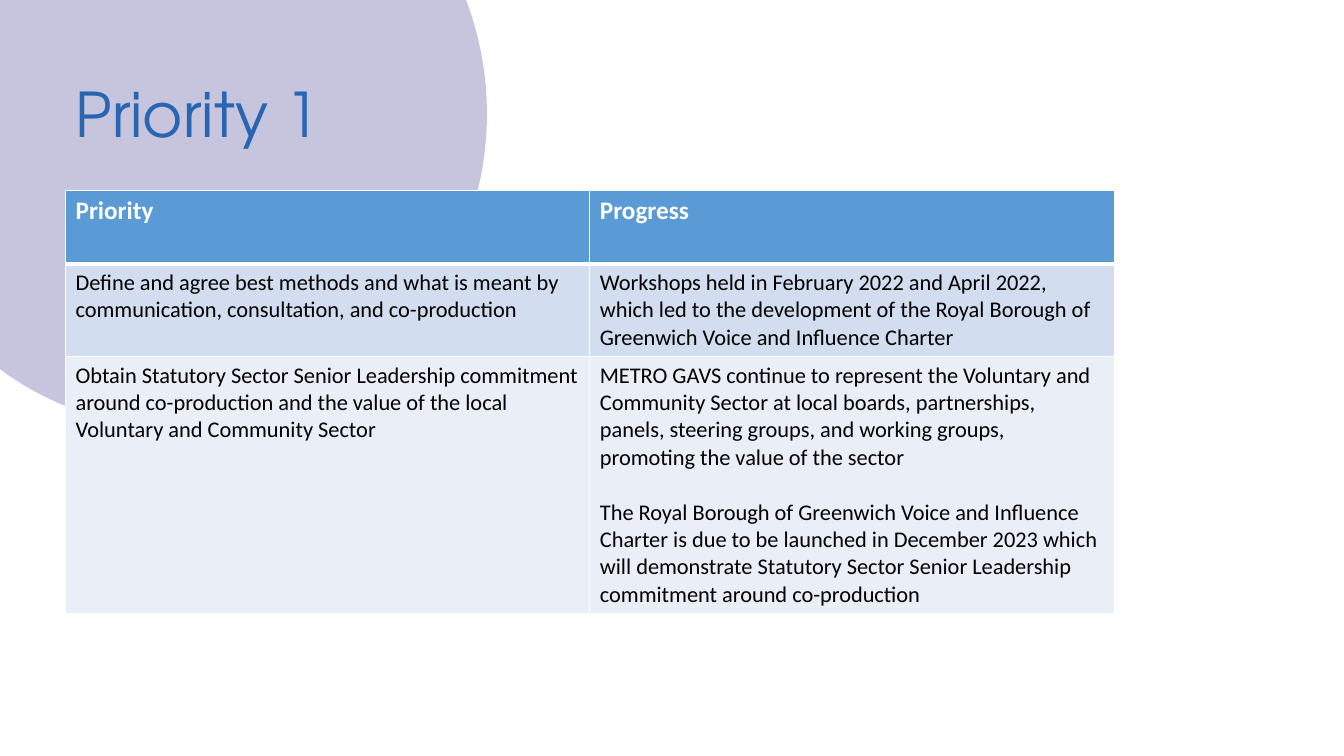
from pptx import Presentation
from pptx.dml.color import RGBColor
from pptx.enum.shapes import MSO_SHAPE
from pptx.enum.text import MSO_ANCHOR, PP_ALIGN
from pptx.oxml import parse_xml
from pptx.oxml.ns import nsdecls, qn
from pptx.util import Pt
from lxml import etree

ELLIPSE = MSO_SHAPE.OVAL
MIDDLE = MSO_ANCHOR.MIDDLE
LEFT = PP_ALIGN.LEFT
PX = 9144
TITLE_ONLY = 5
WHITE = "FFFFFF"

TITLE_FORMAT = {"name": "TeX Gyre Adventor", "size": Pt(44), "bold": False}
HEADER_FORMAT = {"name": "Calibri", "size": Pt(18), "bold": True}
BODY_FORMAT = {"name": "Calibri", "size": Pt(16), "bold": False}
COLUMN_WIDTHS = [520, 520]
ROW_HEIGHTS = [73, 92, 253]
ROW_FILLS = ["5B9BD5", "D2DEEF", "EAEFF7"]
ROWS = [
    [["Priority"], ["Progress"]],
    [
        ["Define and agree best methods and what is meant by communication, "
         "consultation, and co-production"],
        ["Workshops held in February 2022 and April 2022, which led to the "
         "development of the Royal Borough of Greenwich Voice and Influence Charter"],
    ],
    [
        ["Obtain Statutory Sector Senior Leadership commitment around co-production "
         "and the value of the local Voluntary and Community Sector"],
        ["METRO GAVS continue to represent the Voluntary and Community Sector at local "
         "boards, partnerships, panels, steering groups, and working groups, "
         "promoting the value of the sector",
         "The Royal Borough of Greenwich Voice and Influence Charter is due to be "
         "launched in December 2023 which will demonstrate Statutory Sector Senior "
         "Leadership commitment around co-production"],
    ],
]


def px(*lengths):
    """Turn px lengths into EMU."""
    return [length * PX for length in lengths]


def colour(value):
    """Turn a hex string into a colour."""
    return RGBColor.from_string(value)


def add_span(para, text, formats, ink):
    """Add formatted text to a paragraph."""
    span = para.add_run()
    span.text = text
    for name, value in formats.items():
        setattr(span.font, name, value)
    span.font.color.rgb = colour(ink)


def add_title(page, text):
    """Place and format the title placeholder."""
    title = page.shapes.title
    title.left, title.top, title.width, title.height = px(65, 44, 1040, 145)
    title.text_frame.vertical_anchor = MIDDLE
    para = title.text_frame.paragraphs[0]
    para.alignment = LEFT
    para.line_spacing = 0.9
    add_span(para, text, TITLE_FORMAT, "2865B2")


def add_circle(page):
    """Set the translucent circle behind the title."""
    circle = page.shapes.add_shape(ELLIPSE, *px(-127, -199, 610, 624))
    circle.shadow.inherit = False
    circle.line.fill.background()
    circle.fill.solid()
    circle.fill.fore_color.rgb = colour("483C95")
    shade = circle.element.spPr.find(qn("a:solidFill"))[0]
    etree.SubElement(shade, qn("a:alpha"), val="30000")
    page.shapes.title.element.addprevious(circle.element)


def add_borders(cell, widths):
    """Draw white cell borders with point widths by side."""
    properties = cell._tc.get_or_add_tcPr()
    for position, (side, width) in enumerate(widths.items()):
        border = parse_xml(
            f'<a:ln{side} {nsdecls("a")} w="{Pt(width)}"><a:solidFill>'
            f'<a:srgbClr val="{WHITE}"/></a:solidFill></a:ln{side}>')
        properties.insert(position, border)


def fill_cell(cell, texts, formats, ink, fill):
    """Write paragraphs into a filled cell."""
    cell.fill.solid()
    cell.fill.fore_color.rgb = colour(fill)
    frame = cell.text_frame
    for index, text in enumerate(texts):
        para = frame.add_paragraph() if index else frame.paragraphs[0]
        if index:
            para.space_before = Pt(19.5)
        add_span(para, text, formats, ink)


def add_progress_table(page):
    """Add the table of priorities and progress."""
    frame = page.shapes.add_table(
        len(ROWS), len(COLUMN_WIDTHS),
        *px(65, 189, sum(COLUMN_WIDTHS), sum(ROW_HEIGHTS)))
    table = frame.table
    for column, width in zip(table.columns, px(*COLUMN_WIDTHS)):
        column.width = width
    for row, height in zip(table.rows, px(*ROW_HEIGHTS)):
        row.height = height
    for row_index, (texts, fill) in enumerate(zip(ROWS, ROW_FILLS)):
        header = row_index == 0
        formats = HEADER_FORMAT if header else BODY_FORMAT
        ink = WHITE if header else "000000"
        top = 3 if row_index == 1 else 1
        bottom = 3 if header else 1
        for column_index, paragraphs in enumerate(texts):
            cell = table.cell(row_index, column_index)
            fill_cell(cell, paragraphs, formats, ink, fill)
            add_borders(cell, {"L": 1, "R": 1, "T": top, "B": bottom})


def main():
    """Build and save the slide."""
    deck = Presentation()
    deck.slide_width, deck.slide_height = px(1333, 750)
    page = deck.slides.add_slide(deck.slide_layouts[TITLE_ONLY])
    add_title(page, "Priority 1")
    add_circle(page)
    add_progress_table(page)
    deck.save("out.pptx")


if __name__ == "__main__":
    main()
